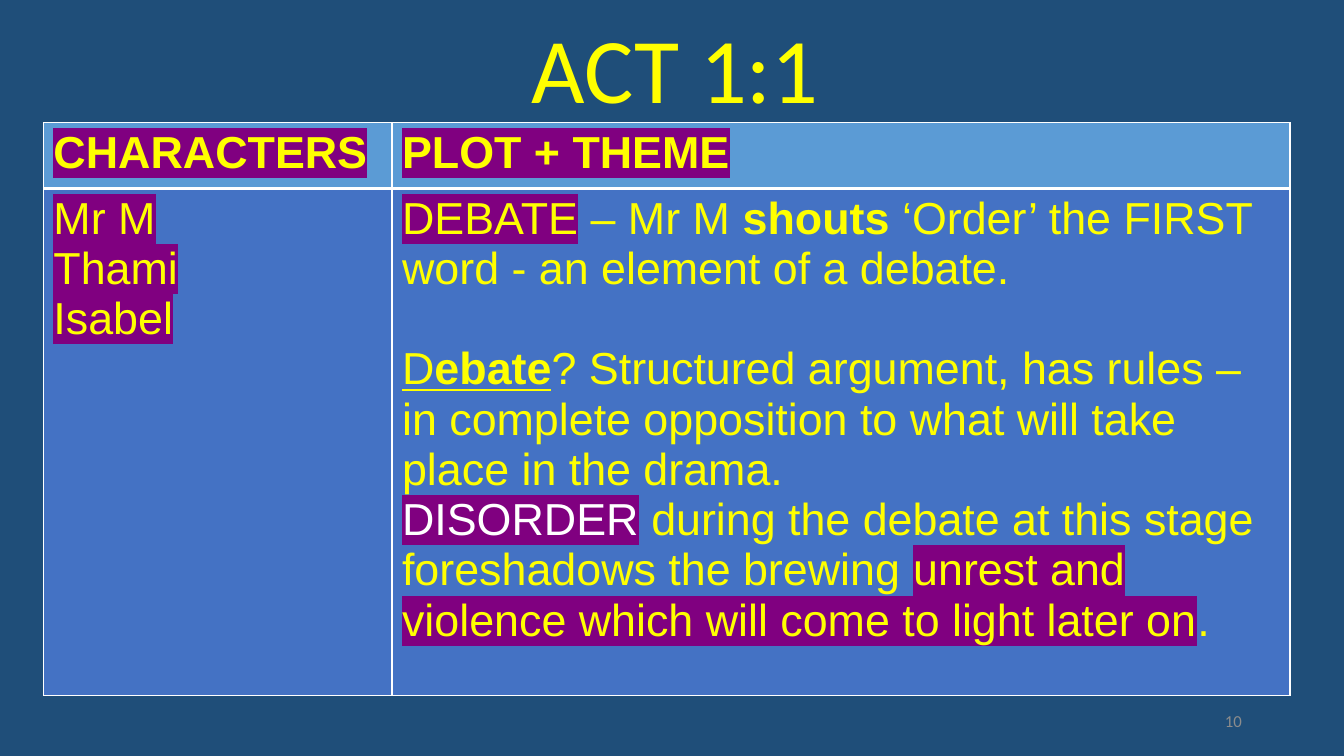
from dataclasses import dataclass

from lxml import etree
from pptx import Presentation
from pptx.dml.color import RGBColor
from pptx.enum import text
from pptx.oxml import ns
from pptx.util import Pt


@dataclass(frozen=True)
class Theme:
    background: str = "1F4E79"
    header: str = "5B9BD5"
    body: str = "4472C4"
    yellow: str = "FFFF00"
    white: str = "FFFFFF"
    purple: str = "800080"
    grey: str = "8C8C8C"
    title_size: float = 66
    table_size: float = 32
    number_size: float = 12
    title_font: str = "Calibri"
    table_font: str = "Arial"
    thin: float = 1
    thick: float = 3


THEME = Theme()
MARKED = {"highlight": THEME.purple}
HEADINGS = ["CHARACTERS", "PLOT + THEME"]
CHARACTERS = ["Mr M", "Thami", "Isabel"]
PLOT = [
    [("DEBATE", MARKED),
     (" – Mr M ", {}),
     ("shouts", {"bold": True}),
     (" ‘Order’ the FIRST word - an element of a debate.", {})],
    [("D", {"underline": True}),
     ("ebate", {"underline": True, "bold": True}),
     ("? Structured argument, has rules – in complete opposition to what "
      "will take place in the drama.", {})],
    [("DISORDER", {"color": THEME.white, **MARKED}),
     (" during the debate at this stage foreshadows the brewing ", {}),
     ("unrest and violence which will come to light later on", MARKED),
     (".", {})],
]
DEBATE_GAP = 36


def add_span(para, content, size=THEME.table_size, font=THEME.table_font,
             color=THEME.yellow, bold=False, underline=False, highlight=None):
    span = para.add_run()
    span.text = content
    style = span.font
    style.size, style.name = Pt(size), font
    style.bold, style.underline = bold, underline
    style.color.rgb = RGBColor.from_string(color)
    if highlight:
        mark = etree.Element(ns.qn("a:highlight"))
        etree.SubElement(mark, ns.qn("a:srgbClr"), val=highlight)
        span._r.get_or_add_rPr().find(ns.qn("a:solidFill")).addnext(mark)


def add_text_box(page, left, top, width, height, content, align,
                 anchor=text.MSO_ANCHOR.TOP, **span_format):
    box = page.shapes.add_textbox(Pt(left), Pt(top), Pt(width), Pt(height))
    frame = box.text_frame
    frame.word_wrap = True
    frame.vertical_anchor = anchor
    para = frame.paragraphs[0]
    para.alignment = align
    add_span(para, content, **span_format)
    return para


def set_borders(cell, **widths):
    """Draw white borders; keys are the sides L, R, T and B."""
    properties = cell._tc.get_or_add_tcPr()
    for index, side in enumerate("LRTB"):
        line = etree.Element(ns.qn(f"a:ln{side}"), w=str(Pt(widths.get(side, THEME.thin))))
        fill = etree.SubElement(line, ns.qn("a:solidFill"))
        etree.SubElement(fill, ns.qn("a:srgbClr"), val=THEME.white)
        properties.insert(index, line)


def fill_cell(cell, paragraphs, color, **borders):
    """Write paragraphs, each a list of (text, format) spans, into a cell."""
    cell.fill.solid()
    cell.fill.fore_color.rgb = RGBColor.from_string(color)
    set_borders(cell, **borders)
    frame = cell.text_frame
    for index, spans in enumerate(paragraphs):
        para = frame.add_paragraph() if index else frame.paragraphs[0]
        for content, span_format in spans:
            add_span(para, content, **span_format)


def add_act_table(page):
    widths, heights = [249, 641.5], [46.8, 362.2]
    frame = page.shapes.add_table(2, 2, Pt(31), Pt(87.8), Pt(sum(widths)), Pt(sum(heights)))
    table = frame.table
    for column, width in zip(table.columns, widths):
        column.width = Pt(width)
    for row, height in zip(table.rows, heights):
        row.height = Pt(height)

    names = [[(name, MARKED)] for name in CHARACTERS]
    for column, (heading, paragraphs) in enumerate(zip(HEADINGS, [names, PLOT])):
        fill_cell(table.cell(0, column), [[(heading, {"bold": True, **MARKED})]],
                  THEME.header, B=THEME.thick)
        fill_cell(table.cell(1, column), paragraphs, THEME.body, T=THEME.thick)
    table.cell(1, 1).text_frame.paragraphs[1].space_before = Pt(DEBATE_GAP)


def main():
    deck = Presentation()
    deck.slide_width, deck.slide_height = Pt(960), Pt(540)
    page = deck.slides.add_slide(deck.slide_layouts[6])
    page.background.fill.solid()
    page.background.fill.fore_color.rgb = RGBColor.from_string(THEME.background)

    title = add_text_box(page, 68.4, 13.7, 828, 462.2, "ACT 1:1", text.PP_ALIGN.CENTER,
                         size=THEME.title_size, font=THEME.title_font)
    title.line_spacing = 0.9
    title.space_before = Pt(10)
    add_act_table(page)
    add_text_box(page, 678.2, 500.4, 216, 28.8, "10", text.PP_ALIGN.RIGHT,
                 anchor=text.MSO_ANCHOR.MIDDLE, size=THEME.number_size,
                 font=THEME.title_font, color=THEME.grey)
    deck.save("out.pptx")


if __name__ == "__main__":
    main()
